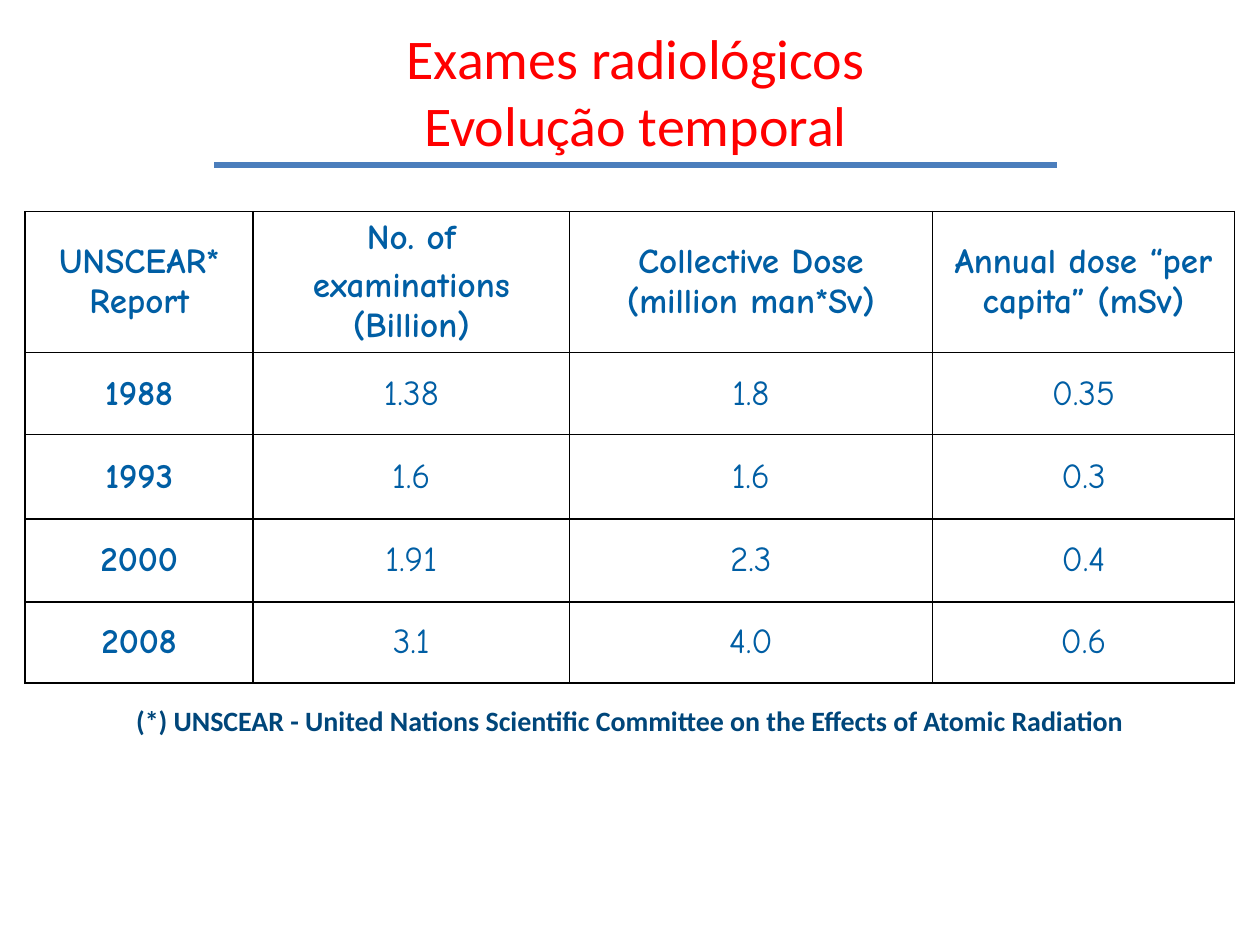
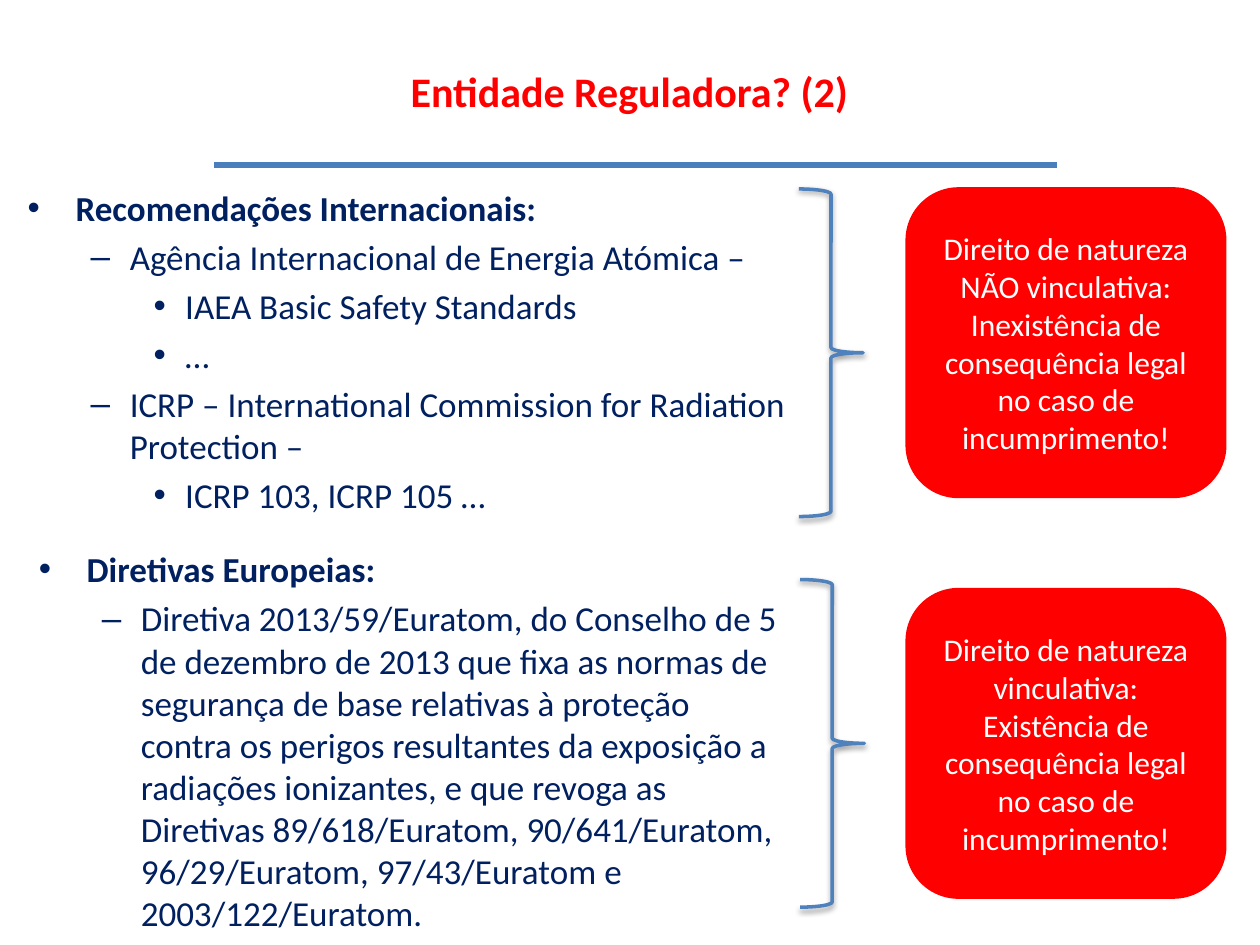
from dataclasses import dataclass

from lxml import etree
from pptx import Presentation
from pptx.dml.color import RGBColor
from pptx.enum.shapes import MSO_CONNECTOR, MSO_SHAPE
from pptx.enum.text import MSO_ANCHOR, MSO_AUTO_SIZE, PP_ALIGN
from pptx.oxml.ns import qn
from pptx.util import Inches, Pt

STRAIGHT = MSO_CONNECTOR.STRAIGHT
ROUND = MSO_SHAPE.ROUNDED_RECTANGLE
BRACE = MSO_SHAPE.RIGHT_BRACE
MIDDLE = MSO_ANCHOR.MIDDLE
TOP = MSO_ANCHOR.TOP
FIXED = MSO_AUTO_SIZE.NONE
GROW = MSO_AUTO_SIZE.SHAPE_TO_FIT_TEXT
CENTER = PP_ALIGN.CENTER
LEFT = PP_ALIGN.LEFT

WIDTH, HEIGHT = Inches(10), Inches(7.5)
COLS, ROWS = 100, 75


@dataclass(frozen=True)
class Theme:
    font: str = "Calibri"
    hand: str = "Comic Neue"
    red: str = "FF0000"
    white: str = "FFFFFF"
    black: str = "000000"
    navy: str = "002060"
    note: str = "00467A"
    cell: str = "005EA4"
    rule: str = "4B7EBC"
    brace: str = "4F81BD"
    large: int = 32
    title: int = 24
    body: int = 20
    label: int = 18
    small: int = 16
    gap: int = 4
    levels: tuple = (("•", 0.38, 0.38), ("–", 0.81, 0.31), ("•", 1.25, 0.25))


def span(cols, rows):
    return round(cols * WIDTH / COLS), round(rows * HEIGHT / ROWS)


def area(left, top, width, height):
    return span(left, top) + span(width, height)


def color(code):
    return RGBColor.from_string(code)


def child(parent, tag, **values):
    return etree.SubElement(parent, qn(tag), {k: str(v) for k, v in values.items()})


class Deck:
    def __init__(self, theme):
        self.theme = theme
        self.file = Presentation()
        self.file.slide_width, self.file.slide_height = WIDTH, HEIGHT
        self.slide = None

    def start(self, layout, text, left, size, bold=False):
        self.slide = self.file.slides.add_slide(self.file.slide_layouts[layout])
        self.rule()
        title = self.slide.shapes.title
        self.place(title, left, 1.3, 66.9, 11.8)
        frame = title.text_frame
        frame.text = text
        self.setup(frame, MIDDLE)
        self.style(frame, size, self.theme.red, bold)

    def place(self, shape, *spot):
        shape.left, shape.top, shape.width, shape.height = area(*spot)

    def setup(self, frame, anchor, fit=FIXED):
        frame.word_wrap = True
        frame.auto_size = fit
        frame.vertical_anchor = anchor

    def style(self, frame, size, ink, bold=False, font=None, align=CENTER, gap=0):
        for index, para in enumerate(frame.paragraphs):
            para.alignment = align
            para.space_before = Pt(gap if index else 0)
            for run in para.runs:
                run.font.name = font or self.theme.font
                run.font.size = Pt(size)
                run.font.bold = bold
                run.font.color.rgb = color(ink)

    def rule(self):
        line = self.slide.shapes.add_connector(STRAIGHT, *span(17, 13.1), *span(83.9, 13.1))
        line.line.color.rgb = color(self.theme.rule)
        line.line.width = Pt(3)
        child(line._element.spPr, "a:effectLst")

    def shape(self, kind, spot, fill=None, line=None):
        shape = self.slide.shapes.add_shape(kind, *area(*spot))
        shape.shadow.inherit = False
        if fill:
            shape.fill.solid()
            shape.fill.fore_color.rgb = color(fill)
        else:
            shape.fill.background()
        if line:
            shape.line.color.rgb = color(line)
            shape.line.width = Pt(2)
        else:
            shape.line.fill.background()
        return shape

    def box(self, text, spot, size, ink, fill=None, bold=False):
        frame = self.shape(ROUND, spot, fill, fill).text_frame
        frame.text = text
        self.setup(frame, MIDDLE)
        self.style(frame, size, ink, bold)

    def brace(self, *spot):
        shape = self.shape(BRACE, spot, line=self.theme.brace)
        shape.adjustments[0], shape.adjustments[1] = 0.08, 0.5
        effects = shape._element.spPr.find(qn("a:effectLst"))
        shade = child(effects, "a:outerShdw", blurRad=Pt(3.1), dist=Pt(1.6),
                      dir=5400000, rotWithShape=0)
        child(child(shade, "a:srgbClr", val=self.theme.black), "a:alpha", val=38000)

    def items(self, items, spot, holder=None):
        if holder:
            self.place(holder, *spot)
        shape = holder or self.slide.shapes.add_textbox(*area(*spot))
        frame = shape.text_frame
        frame.text = "\n".join(text for level, text in items)
        self.setup(frame, TOP, FIXED if holder else GROW)
        for para, (level, text) in zip(frame.paragraphs, items):
            mark, left, hang = self.theme.levels[level]
            para.level = level
            props = para._p.get_or_add_pPr()
            props.set("marL", str(Inches(left)))
            props.set("indent", str(-Inches(hang)))
            child(props, "a:buFont", typeface="Arial")
            child(props, "a:buChar", char=mark)
        self.style(frame, self.theme.body, self.theme.navy, align=LEFT, gap=self.theme.gap)
        for para, (level, text) in zip(frame.paragraphs, items):
            para.runs[0].font.bold = level == 0

    def table(self, data, left, top, widths, heights):
        spot = area(left, top, sum(widths), sum(heights))
        table = self.slide.shapes.add_table(len(data), len(widths), *spot).table
        table.first_row = table.horz_banding = False
        for col, width in zip(table.columns, widths):
            col.width = span(width, 0)[0]
        for row, height in zip(table.rows, heights):
            row.height = span(0, height)[1]
        for y, line in enumerate(data):
            for x, text in enumerate(line):
                cell = table.cell(y, x)
                cell.text = text
                cell.vertical_anchor = MIDDLE
                self.style(cell.text_frame, self.theme.body, self.theme.cell,
                           not x or not y, self.theme.hand, gap=self.theme.gap)
                self.border(cell)
                cell.fill.background()

    def border(self, cell):
        props = cell._tc.get_or_add_tcPr()
        for side in ("L", "R", "T", "B"):
            line = child(props, "a:ln" + side, w=Pt(1))
            child(child(line, "a:solidFill"), "a:srgbClr", val=self.theme.black)


DOSES = (
    ("UNSCEAR* Report", "No. of\nexaminations (Billion)",
     "Collective Dose (million man*Sv)", "Annual dose “per capita” (mSv)"),
    ("1988", "1.38", "1.8", "0.35"),
    ("1993", "1.6", "1.6", "0.3"),
    ("2000", "1.91", "2.3", "0.4"),
    ("2008", "3.1", "4.0", "0.6"),
)
ADVICE = (
    (0, "Recomendações Internacionais:"),
    (1, "Agência Internacional de Energia Atómica –"),
    (2, "IAEA Basic Safety Standards"),
    (2, "…"),
    (1, "ICRP – International Commission for Radiation Protection –"),
    (2, "ICRP 103, ICRP 105 …"),
)
LAWS = (
    (0, "Diretivas Europeias:"),
    (1, "Diretiva 2013/59/Euratom, do Conselho de 5 de dezembro de 2013 que fixa as "
        "normas de segurança de base relativas à proteção contra os perigos resultantes "
        "da exposição a radiações ionizantes, e que revoga as Diretivas 89/618/Euratom, "
        "90/641/Euratom, 96/29/Euratom, 97/43/Euratom e 2003/122/Euratom."),
)
FORCES = (
    ("NÃO vinculativa", "Inexistência", 63.4, 15, 15),
    ("vinculativa", "Existência", 63.5, 46, 46.8),
)


def exams(deck):
    theme = deck.theme
    deck.start(5, "Exames radiológicos\vEvolução temporal", 17, theme.large)
    deck.table(DOSES, 2, 16.8, (18.1, 25.1, 28.8, 24), (11.2, 6.5, 6.7, 6.6, 6.4))
    deck.box("(*) UNSCEAR - United Nations Scientific Committee on the Effects of "
             "Atomic Radiation", (0, 54.8, 100, 4.7), theme.small, theme.note, bold=True)


def rules(deck):
    theme = deck.theme
    deck.start(1, "Entidade Reguladora? (2)", 16.5, theme.title, True)
    deck.items(ADVICE, (1.2, 14.3, 62.2, 27.6), deck.slide.placeholders[1])
    deck.items(LAWS, (2.1, 43, 61.4, 32))
    for force, state, left, top, start in FORCES:
        deck.brace(left, top, 5.1, 26)
        deck.box(f"Direito de natureza {force}:\n"
                 f"{state} de consequência legal no caso de incumprimento!",
                 (72, start, 25.2, 24.4), theme.label, theme.white, theme.red)


def main():
    deck = Deck(Theme())
    exams(deck)
    rules(deck)
    deck.file.save("out.pptx")


if __name__ == "__main__":
    main()
